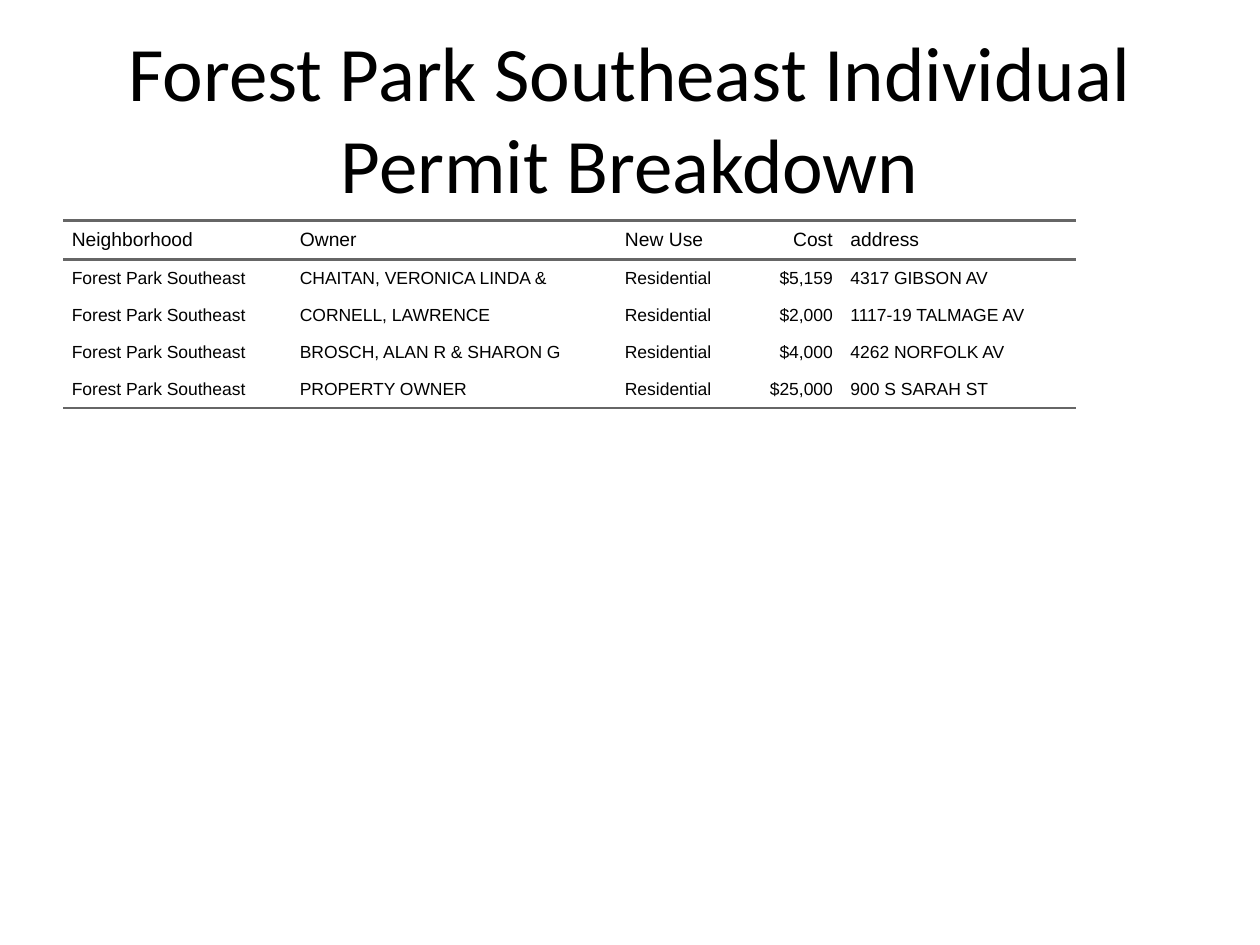
from dataclasses import dataclass

from lxml import etree
from pptx import Presentation
from pptx.dml.color import RGBColor
from pptx.enum.text import MSO_ANCHOR, MSO_AUTO_SIZE, PP_ALIGN
from pptx.oxml.ns import qn
from pptx.util import Inches, Pt

MIDDLE = MSO_ANCHOR.MIDDLE
NO_AUTOFIT = MSO_AUTO_SIZE.NONE
CENTER, LEFT, RIGHT = PP_ALIGN.CENTER, PP_ALIGN.LEFT, PP_ALIGN.RIGHT
TITLE_ONLY_LAYOUT = 5


@dataclass(frozen=True)
class Theme:
    title_font: str = "Calibri"
    table_font: str = "Arial"
    text_color: str = "000000"
    rule_color: str = "666666"
    title_size: int = 44
    header_size: int = 11
    body_size: int = 10
    rule_width: float = 1.5
    paragraph_gap: int = 5


THEME = Theme()
CELL_PADDING = Inches(0.07)
ROW_HEIGHT = Inches(0.25)
COST_COLUMN = 3
COLUMNS = {
    "Neighborhood": 1.81,
    "Owner": 2.58,
    "New Use": 1.04,
    "Cost": 0.75,
    "address": 1.86,
}
NEIGHBORHOOD, NEW_USE = "Forest Park Southeast", "Residential"
PERMITS = [
    ("CHAITAN, VERONICA LINDA &", "$5,159", "4317 GIBSON AV"),
    ("CORNELL, LAWRENCE", "$2,000", "1117-19 TALMAGE AV"),
    ("BROSCH, ALAN R & SHARON G", "$4,000", "4262 NORFOLK AV"),
    ("PROPERTY OWNER", "$25,000", "900 S SARAH ST"),
]


def add_run(paragraph, text, font_name, size):
    run = paragraph.add_run()
    run.text = text
    run.font.name = font_name
    run.font.size = Pt(size)
    run.font.color.rgb = RGBColor.from_string(THEME.text_color)


def place_title(slide, text, left, top, width, height):
    title = slide.shapes.title
    title.left, title.top, title.width, title.height = left, top, width, height
    frame = title.text_frame
    frame.word_wrap = True
    frame.auto_size = NO_AUTOFIT
    frame.vertical_anchor = MIDDLE
    paragraph = frame.paragraphs[0]
    paragraph.alignment = CENTER
    add_run(paragraph, text, THEME.title_font, THEME.title_size)


def set_borders(cell, ruled_sides):
    properties = cell._tc.get_or_add_tcPr()
    for side in ("L", "R", "T", "B"):
        line = etree.SubElement(properties, qn(f"a:ln{side}"))
        if side in ruled_sides:
            line.set("w", str(Pt(THEME.rule_width)))
            fill = etree.SubElement(line, qn("a:solidFill"))
            etree.SubElement(fill, qn("a:srgbClr"), val=THEME.rule_color)
        else:
            etree.SubElement(line, qn("a:noFill"))


def format_cell(cell, text, size, alignment, ruled_sides):
    cell.margin_left = cell.margin_right = 0
    cell.margin_top = cell.margin_bottom = CELL_PADDING
    cell.vertical_anchor = MIDDLE
    set_borders(cell, ruled_sides)
    cell.fill.background()
    paragraph = cell.text_frame.paragraphs[0]
    paragraph.alignment = alignment
    paragraph.space_before = paragraph.space_after = Pt(THEME.paragraph_gap)
    paragraph_properties = paragraph._p.get_or_add_pPr()
    for name, value in (("marL", CELL_PADDING), ("marR", CELL_PADDING), ("indent", 0)):
        paragraph_properties.set(name, str(value))
    add_run(paragraph, text, THEME.table_font, size)


def place_permit_table(slide, left, top, width, height):
    rows = [tuple(COLUMNS)]
    rows += [(NEIGHBORHOOD, owner, NEW_USE, cost, address)
             for owner, cost, address in PERMITS]
    graphic_frame = slide.shapes.add_table(
        len(rows), len(COLUMNS), left, top, width, height)
    table = graphic_frame.table
    table.first_row = table.horz_banding = False
    for column, column_width in zip(table.columns, COLUMNS.values()):
        column.width = Inches(column_width)
    last_row = len(rows) - 1
    for row_index, values in enumerate(rows):
        table.rows[row_index].height = ROW_HEIGHT
        size = THEME.body_size if row_index else THEME.header_size
        ruled_sides = {0: "TB", 1: "T", last_row: "B"}.get(row_index, "")
        for column_index, text in enumerate(values):
            alignment = RIGHT if column_index == COST_COLUMN else LEFT
            format_cell(table.cell(row_index, column_index), text, size,
                        alignment, ruled_sides)
    graphic_frame.width, graphic_frame.height = width, height


def main():
    presentation = Presentation()
    presentation.slide_width = Inches(10)
    presentation.slide_height = Inches(7.5)
    slide = presentation.slides.add_slide(
        presentation.slide_layouts[TITLE_ONLY_LAYOUT])
    place_title(slide, "Forest Park Southeast Individual Permit Breakdown",
                Inches(0.5), Inches(0.3), Inches(9), Inches(1.25))
    place_permit_table(slide, Inches(0.5), Inches(1.75), Inches(9), Inches(4.95))
    presentation.save("out.pptx")


if __name__ == "__main__":
    main()
